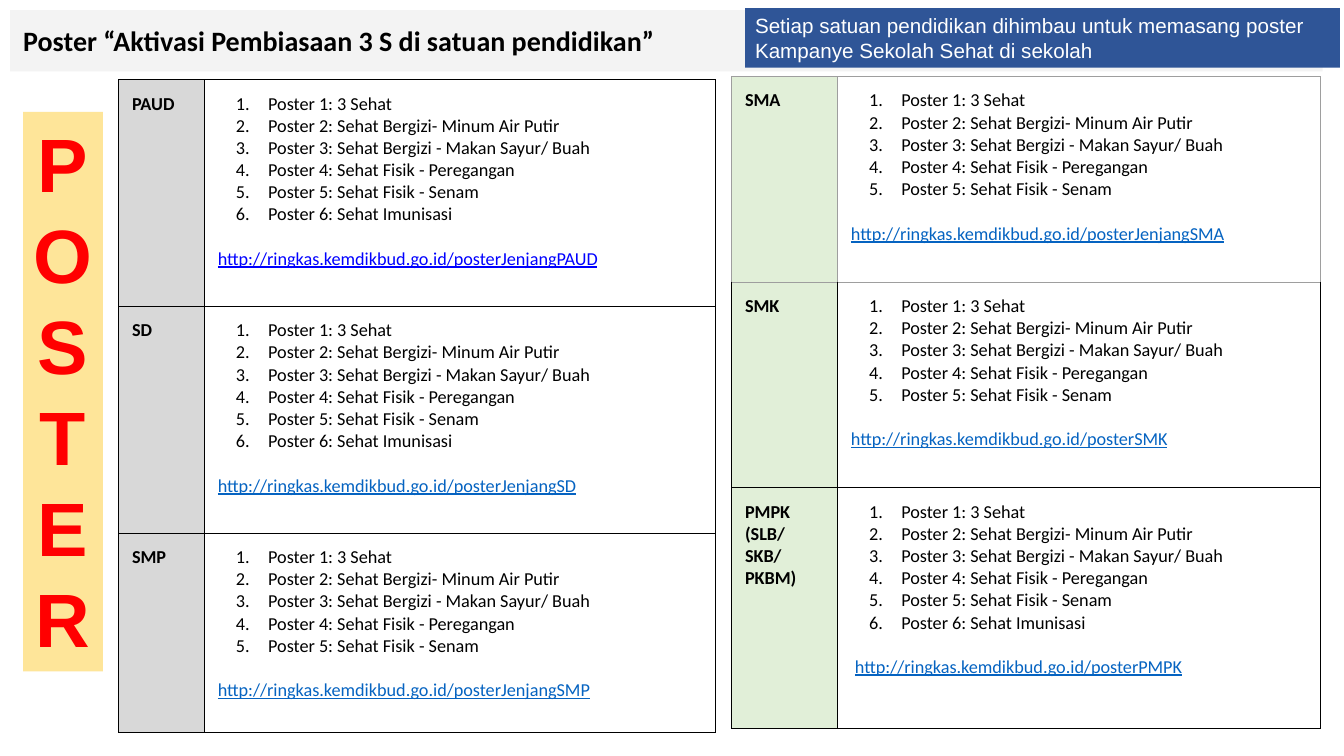
from dataclasses import dataclass

from lxml import etree
from pptx import Presentation
from pptx.dml.color import RGBColor
from pptx.enum.shapes import MSO_SHAPE
from pptx.enum.text import MSO_ANCHOR, MSO_AUTO_SIZE, PP_ALIGN
from pptx.oxml.ns import qn
from pptx.util import Emu, Inches, Pt

RECTANGLE = MSO_SHAPE.RECTANGLE
TOP, MIDDLE = MSO_ANCHOR.TOP, MSO_ANCHOR.MIDDLE
LEFT, CENTER = PP_ALIGN.LEFT, PP_ALIGN.CENTER
NO_AUTOFIT = MSO_AUTO_SIZE.NONE

COLORS = {
    "ink": "000000", "white": "FFFFFF", "title_band": "F3F3F3",
    "notice": "2F5597", "banner": "FEE599", "banner_text": "FF0000",
    "gray_label": "D8D8D8", "green_label": "E1EFD8",
    "gray_line": "9E9E9E", "link": "0563C1", "bright_link": "0000FF",
}
POSTERS = [
    "Poster 1: 3 Sehat",
    "Poster 2: Sehat Bergizi- Minum Air Putir",
    "Poster 3: Sehat Bergizi - Makan Sayur/ Buah",
    "Poster 4: Sehat Fisik - Peregangan",
    "Poster 5: Sehat Fisik - Senam",
    "Poster 6: Sehat Imunisasi",
]
LINK_BASE = "http://ringkas.kemdikbud.go.id/poster"
SLIDE_WIDTH, SLIDE_HEIGHT = Inches(13.33), Inches(7.5)
CELL_INSET = Inches(0.13)
LIST_INDENT, LIST_HANGING = Inches(0.5), Inches(-0.32)
LINE_HEIGHT = Pt(15.8)


@dataclass
class Box:
    """Place and size in percent of the slide."""
    left: float
    top: float
    width: float
    height: float

    def emu(self) -> tuple[Emu, Emu, Emu, Emu]:
        return (across(self.left), down(self.top),
                across(self.width), down(self.height))


@dataclass
class TextStyle:
    size: float
    color: str
    font: str = "Calibri"
    bold: bool = False
    underline: bool = False


@dataclass
class Stage:
    label: str
    poster_count: int
    link: str
    height: float
    link_color: str = "link"
    link_indent: float = 0
    top_line: str = "ink"
    bottom_line: str = "ink"
    side_line: str = "ink"


@dataclass
class StageTable:
    left: float
    top: float
    columns: tuple[float, float]
    label_fill: str
    stages: list[Stage]


STAGE_TABLES = [
    StageTable(8.85, 10.53, (6.38, 38.03), "gray_label", [
        Stage("PAUD", 6, "JenjangPAUD", 30, link_color="bright_link"),
        Stage("SD", 6, "JenjangSD", 30),
        Stage("SMP", 5, "JenjangSMP", 26.4),
    ]),
    StageTable(54.46, 10.13, (7.88, 35.93), "green_label", [
        Stage("SMA", 5, "JenjangSMA", 27.2, top_line="gray_line",
              bottom_line="gray_line", side_line="gray_line"),
        Stage("SMK", 5, "SMK", 27.2, top_line="gray_line"),
        Stage("PMPK (SLB/ SKB/ PKBM)", 6, "PMPK", 31.87, link_indent=0.04),
    ]),
]


def across(share: float) -> Emu:
    return Emu(round(SLIDE_WIDTH * share / 100))


def down(share: float) -> Emu:
    return Emu(round(SLIDE_HEIGHT * share / 100))


def rgb(name: str) -> RGBColor:
    return RGBColor.from_string(COLORS[name])


def style_paragraph(paragraph, style: TextStyle, align=LEFT) -> None:
    paragraph.alignment = align
    for run in paragraph.runs:
        run.font.name = style.font
        run.font.size = Pt(style.size)
        run.font.bold = style.bold
        run.font.underline = style.underline
        run.font.color.rgb = rgb(style.color)


def fill_panel(panel, text: str, fill: str, style: TextStyle, align=LEFT,
               anchor=MIDDLE, inset=(0.1, 0.05)) -> None:
    panel.fill.solid()
    panel.fill.fore_color.rgb = rgb(fill)
    panel.line.fill.background()
    frame = panel.text_frame
    frame.text = text
    frame.word_wrap = True
    frame.auto_size = NO_AUTOFIT
    frame.vertical_anchor = anchor
    frame.margin_left = frame.margin_right = Inches(inset[0])
    frame.margin_top = frame.margin_bottom = Inches(inset[1])
    for paragraph in frame.paragraphs:
        style_paragraph(paragraph, style, align)


def add_panel(slide, box: Box):
    panel = slide.shapes.add_shape(RECTANGLE, *box.emu())
    panel.shadow.inherit = False
    return panel


def number_paragraph(paragraph) -> None:
    properties = paragraph._p.get_or_add_pPr()
    properties.set("marL", str(LIST_INDENT))
    properties.set("indent", str(LIST_HANGING))
    color = etree.SubElement(properties, qn("a:buClr"))
    etree.SubElement(color, qn("a:srgbClr"), val=COLORS["ink"])
    etree.SubElement(properties, qn("a:buFont"), typeface="Calibri")
    etree.SubElement(properties, qn("a:buAutoNum"), type="arabicPeriod")


def format_cell(cell, fill: str, stage: Stage) -> None:
    cell.margin_left = cell.margin_right = CELL_INSET
    cell.margin_top = cell.margin_bottom = CELL_INSET
    cell.vertical_anchor = TOP
    cell.fill.solid()
    cell.fill.fore_color.rgb = rgb(fill)
    # Borders come before the fill in the cell properties
    edges = {"a:lnL": stage.side_line, "a:lnR": stage.side_line,
             "a:lnT": stage.top_line, "a:lnB": stage.bottom_line}
    properties = cell._tc.get_or_add_tcPr()
    for position, (edge, color) in enumerate(edges.items()):
        border = etree.Element(qn(edge), w=str(Pt(0.75)))
        solid = etree.SubElement(border, qn("a:solidFill"))
        etree.SubElement(solid, qn("a:srgbClr"), val=COLORS[color])
        properties.insert(position, border)


def write_posters(cell, stage: Stage) -> None:
    lines = POSTERS[:stage.poster_count] + [LINK_BASE + stage.link]
    cell.text_frame.text = "\n".join(lines)
    *posters, link = cell.text_frame.paragraphs
    for poster in posters:
        style_paragraph(poster, TextStyle(13, "ink"))
        number_paragraph(poster)
    style_paragraph(link, TextStyle(13, stage.link_color, underline=True))
    link.space_before = LINE_HEIGHT
    link._p.get_or_add_pPr().set("marL", str(Inches(stage.link_indent)))


def add_stage_table(slide, content: StageTable) -> None:
    box = Box(content.left, content.top, sum(content.columns),
              sum(stage.height for stage in content.stages))
    table = slide.shapes.add_table(len(content.stages), 2, *box.emu()).table
    table.first_row = table.horz_banding = False
    for column, width in zip(table.columns, content.columns):
        column.width = across(width)
    for row, stage in zip(table.rows, content.stages):
        row.height = down(stage.height)
        label, posters = row.cells
        label.text_frame.text = stage.label
        style_paragraph(label.text_frame.paragraphs[0],
                        TextStyle(13, "ink", bold=True))
        write_posters(posters, stage)
        format_cell(label, content.label_fill, stage)
        format_cell(posters, "white", stage)


def main() -> None:
    presentation = Presentation()
    presentation.slide_width = SLIDE_WIDTH
    presentation.slide_height = SLIDE_HEIGHT
    slide = presentation.slides.add_slide(presentation.slide_layouts[5])

    # Title band
    title = slide.shapes.title
    title.left, title.top, title.width, title.height = Box(0.75, 1.33, 97.67, 8.13).emu()
    fill_panel(title, "Poster “Aktivasi Pembiasaan 3 S di satuan pendidikan”",
               "title_band", TextStyle(20, "ink", bold=True), inset=(0.13, 0.13))

    # Posters for each school stage
    for content in STAGE_TABLES:
        add_stage_table(slide, content)

    # Notice to schools
    notice = add_panel(slide, Box(55.44, 1.07, 44.26, 7.87))
    fill_panel(notice, "Setiap satuan pendidikan dihimbau untuk memasang poster "
               "Kampanye Sekolah Sehat di sekolah", "notice",
               TextStyle(14.7, "white", "Arial"))

    # Vertical banner, one letter a line
    banner = add_panel(slide, Box(1.73, 14.8, 5.93, 74))
    fill_panel(banner, "\n".join("POSTER"), "banner",
               TextStyle(54, "banner_text", "Arial", bold=True), CENTER, TOP)
    for letter in banner.text_frame.paragraphs:
        letter.line_spacing = Pt(65)

    presentation.save("out.pptx")


if __name__ == "__main__":
    main()
